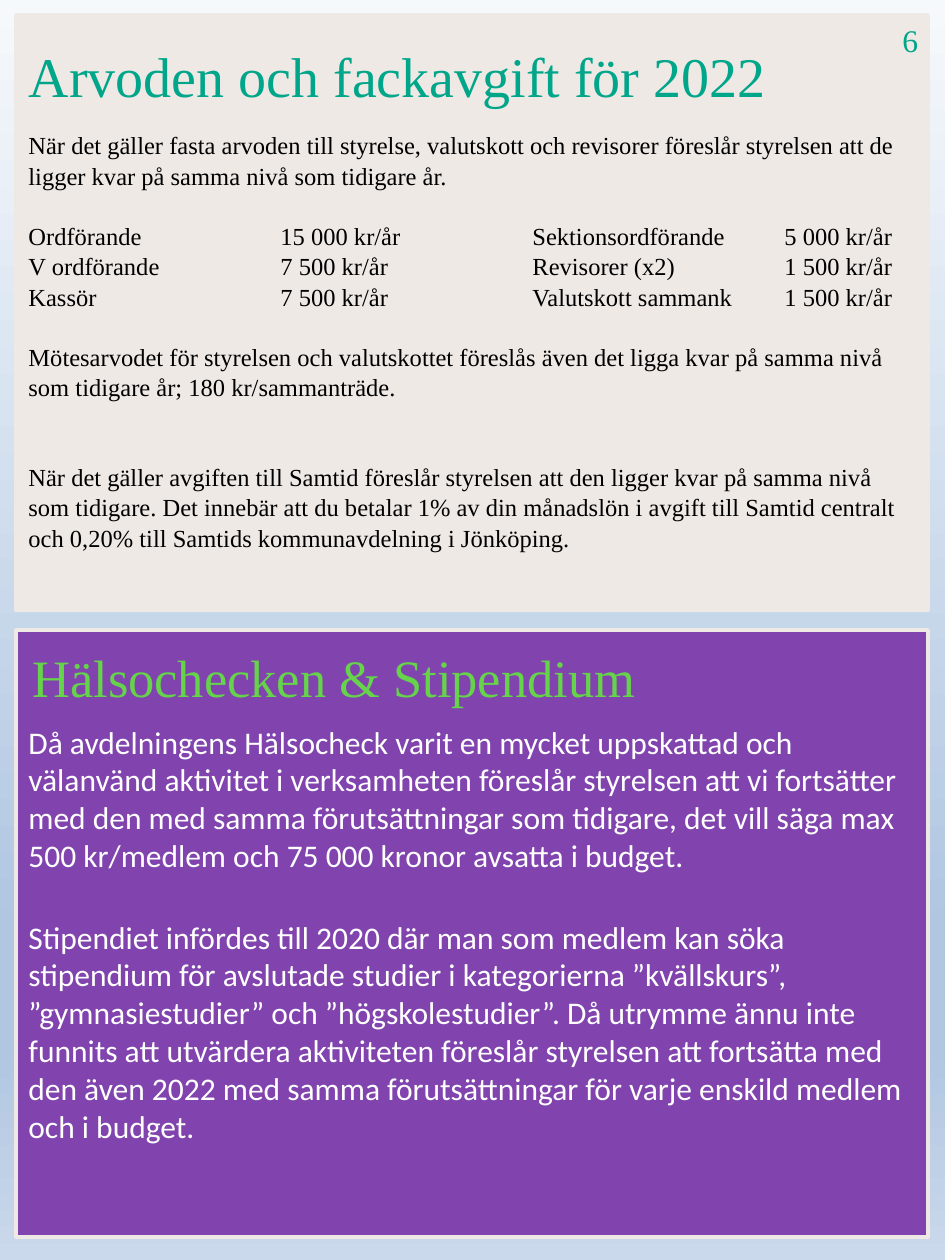
from lxml import etree
from pptx import Presentation
from pptx import util as u
from pptx.dml.color import RGBColor
from pptx.enum import shapes, text
from pptx.oxml.ns import qn

SCALE = u.Inches(1) / 126
COLORS = {
    "sand": "EFE9E5",
    "purple": "8144AE",
    "teal": "00A68A",
    "green": "65D44A",
    "black": "000000",
    "white": "FFFFFF",
}
SKY = [(0, "F6F9FC"), (74, "B0C6E1"), (83, "B0C6E1"), (100, "CAD9EB")]
SERIF = "Times New Roman"
GAP = 16.8
FEE_TABS = [252, 504, 756]

FEES = [
    ("När det gäller fasta arvoden till styrelse, valutskott och revisorer föreslår "
     "styrelsen att de ligger kvar på samma nivå som tidigare år.", 0),
    ("Ordförande\t15 000 kr/år\tSektionsordförande\t5 000 kr/år", GAP),
    ("V ordförande\t7 500 kr/år\tRevisorer (x2)\t1 500 kr/år", 0),
    ("Kassör\t7 500 kr/år\tValutskott sammank\t1 500 kr/år", 0),
    ("Mötesarvodet för styrelsen och valutskottet föreslås även det ligga kvar på samma "
     "nivå som tidigare år; 180 kr/sammanträde.", GAP),
    ("När det gäller avgiften till Samtid föreslår styrelsen att den ligger kvar på samma "
     "nivå som tidigare. Det innebär att du betalar 1% av din månadslön i avgift till "
     "Samtid centralt och 0,20% till Samtids kommunavdelning i Jönköping.", 2 * GAP),
]
HEALTH = [
    ("Då avdelningens Hälsocheck varit en mycket uppskattad och välanvänd aktivitet i "
     "verksamheten föreslår styrelsen att vi fortsätter med den med samma förutsättningar "
     "som tidigare, det vill säga max 500 kr/medlem och 75 000 kronor avsatta i budget.", 0),
    ("Stipendiet infördes till 2020 där man som medlem kan söka stipendium för avslutade "
     "studier i kategorierna ”kvällskurs”, ”gymnasiestudier” och ”högskolestudier”. Då "
     "utrymme ännu inte funnits att utvärdera aktiviteten föreslår styrelsen att fortsätta "
     "med den även 2022 med samma förutsättningar för varje enskild medlem och i budget.", 25),
]


def px(value):
    return u.Emu(round(value * SCALE))


def rgb(name):
    return RGBColor.from_string(COLORS[name])


def assign(target, values):
    for name, value in values.items():
        setattr(target, name, value)


class Builder:
    def __init__(self, deck):
        self.page = deck.slides.add_slide(deck.slide_layouts[5])

    def background(self, stops):
        fill = self.page.background.fill
        fill.gradient()
        fill.gradient_angle = 270
        stop_list = self.page._element.find(".//" + qn("a:gsLst"))
        stop_list.clear()
        for percent, color in stops:
            stop = etree.SubElement(stop_list, qn("a:gs"), pos=str(percent * 1000))
            etree.SubElement(stop, qn("a:srgbClr"), val=color)

    def panel(self, area, color):
        box = self.page.shapes.add_shape(shapes.MSO_SHAPE.RECTANGLE, *map(px, area))
        box.shadow.inherit = False
        box.fill.solid()
        box.fill.fore_color.rgb = rgb(color)
        box.line.color.rgb = rgb("sand")
        box.line.width = u.Pt(2)
        return box

    def title(self, area, wording, size, color):
        box = self.page.shapes.title
        assign(box, dict(zip(("left", "top", "width", "height"), map(px, area))))
        self.page.shapes._spTree.append(box._element)
        self.fill_text(box, [(wording, 0)], size, color)

    def label(self, area, paragraphs, size, color, **options):
        box = self.page.shapes.add_textbox(*map(px, area))
        self.fill_text(box, paragraphs, size, color, **options)

    def fill_text(self, box, paragraphs, size, color, font=SERIF, spacing=1.0,
                  anchor=text.MSO_ANCHOR.TOP, wrap=True, tabs=()):
        frame = box.text_frame
        assign(frame, {"word_wrap": wrap, "vertical_anchor": anchor,
                       "auto_size": text.MSO_AUTO_SIZE.NONE})
        for index, (wording, before) in enumerate(paragraphs):
            para = frame.add_paragraph() if index else frame.paragraphs[0]
            assign(para, {"alignment": text.PP_ALIGN.LEFT, "line_spacing": spacing,
                          "space_before": u.Pt(before)})
            if "\t" in wording:
                self.tab_stops(para, tabs)
            span = para.add_run()
            span.text = wording
            assign(span.font, {"name": font, "size": u.Pt(size)})
            span.font.color.rgb = rgb(color)

    def tab_stops(self, para, tabs):
        stops = etree.SubElement(para._p.get_or_add_pPr(), qn("a:tabLst"))
        for position in tabs:
            etree.SubElement(stops, qn("a:tab"), pos=str(px(position)), algn="l")


def main():
    deck = Presentation()
    assign(deck, {"slide_width": px(945), "slide_height": px(1260)})
    builder = Builder(deck)
    builder.background(SKY)
    builder.panel((16, 15, 912, 595), "sand")
    builder.title((16, 35, 833, 81), "Arvoden och fackavgift för 2022", 32, "teal")
    health = builder.panel((16, 630, 912, 607), "purple")
    builder.fill_text(health, HEALTH, 18, "white", font="Calibri",
                      anchor=text.MSO_ANCHOR.MIDDLE)
    builder.label((16, 123, 903, 428), FEES, 14, "black", spacing=1.04, tabs=FEE_TABS)
    builder.label((890, 15, 39, 50), [("6", 0)], 18, "teal", wrap=False)
    builder.label((20, 639, 898, 77), [("Hälsochecken & Stipendium", 0)], 30, "green")
    deck.save("out.pptx")


if __name__ == "__main__":
    main()
